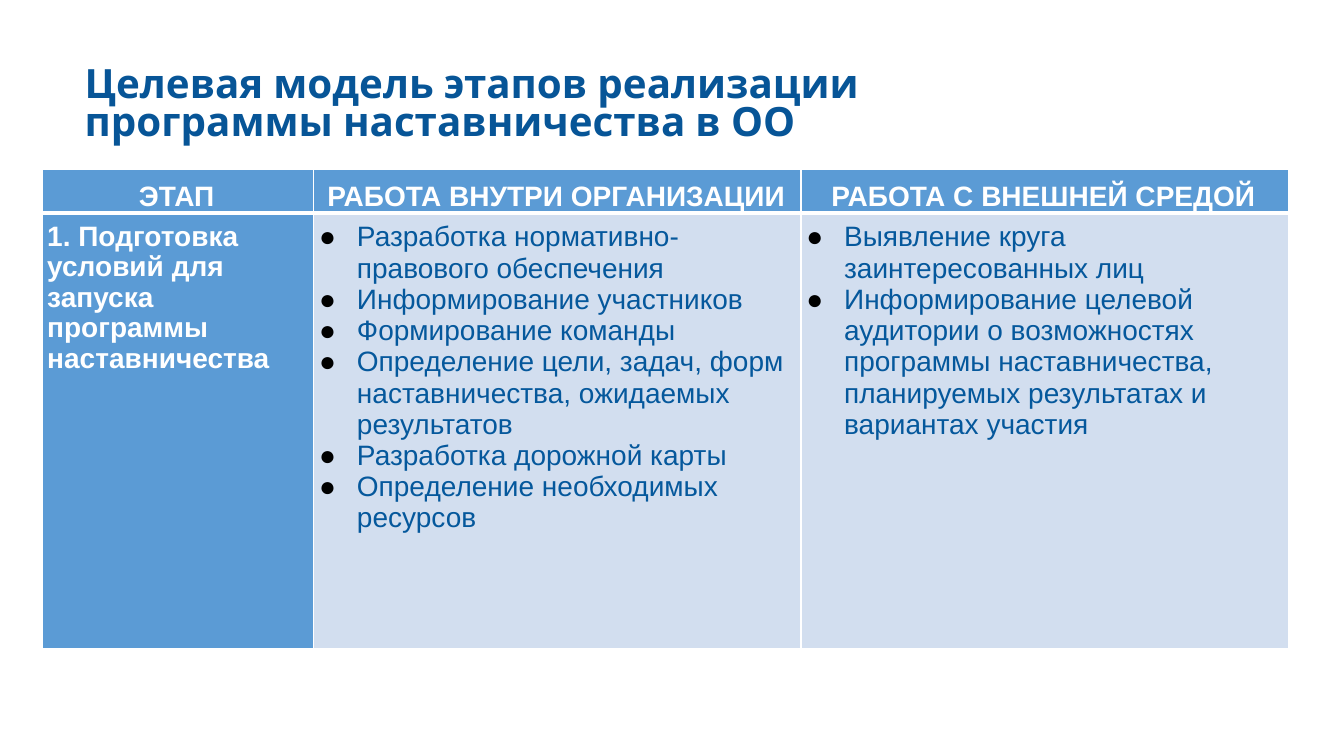
from lxml.etree import SubElement
from pptx import Presentation
from pptx.dml.color import RGBColor
from pptx.enum.text import MSO_ANCHOR as Anchor, MSO_AUTO_SIZE as AutoSize, PP_ALIGN as Align
from pptx.oxml import parse_xml
from pptx.oxml.ns import nsdecls, qn
from pptx.util import Emu, Pt

PX = 9525
WHITE = RGBColor(0xFF, 0xFF, 0xFF)
BLACK = RGBColor(0x00, 0x00, 0x00)
TITLE_BLUE = RGBColor(0x07, 0x55, 0x97)
TEXT_BLUE = RGBColor(0x05, 0x58, 0x9C)
HEADER_BLUE = RGBColor(0x5B, 0x9B, 0xD5)
PALE_BLUE = RGBColor(0xD2, 0xDE, 0xEF)

TITLE = "Целевая модель этапов реализации программы наставничества в ОО"
HEADERS = ["ЭТАП ", "РАБОТА ВНУТРИ ОРГАНИЗАЦИИ ", "РАБОТА С ВНЕШНЕЙ СРЕДОЙ "]
STAGE = "1. Подготовка условий для запуска программы наставничества"
INTERNAL_WORK = [
    "Разработка нормативно-правового обеспечения",
    "Информирование участников",
    "Формирование команды",
    "Определение цели, задач, форм наставничества, ожидаемых результатов",
    "Разработка дорожной карты",
    "Определение необходимых ресурсов",
]
EXTERNAL_WORK = [
    "Выявление круга заинтересованных лиц",
    "Информирование целевой аудитории о возможностях программы наставничества, "
    "планируемых результатах и вариантах участия",
]
COLUMN_WIDTHS = [259, 464, 464]
ROW_HEIGHTS = [42, 415]


def px(value):
    return Emu(value * PX)


def set_font(paragraph, name, size, color, bold):
    font = paragraph.font
    font.name = name
    font.size = Pt(size)
    font.bold = bold
    font.color.rgb = color


def add_bullet(paragraph):
    properties = paragraph._p.get_or_add_pPr()
    properties.set("marL", str(px(36)))
    properties.set("indent", str(px(-36)))
    bullet_color = SubElement(properties, qn("a:buClr"))
    SubElement(bullet_color, qn("a:srgbClr"), val=str(BLACK))
    SubElement(properties, qn("a:buFont"), typeface="Arial")
    SubElement(properties, qn("a:buChar"), char="●")


def set_borders(cell, bottom_width):
    properties = cell._tc.get_or_add_tcPr()
    sides = [("L", 1), ("R", 1), ("T", 1), ("B", bottom_width)]
    for index, (side, width) in enumerate(sides):
        border = parse_xml(
            f'<a:ln{side} {nsdecls("a")} w="{Pt(width)}"><a:solidFill>'
            f'<a:srgbClr val="{WHITE}"/></a:solidFill></a:ln{side}>'
        )
        properties.insert(index, border)


def fill_cell(cell, lines, fill, color, bold, spacing=None, align=Align.LEFT,
              anchor=Anchor.TOP, bulleted=False, bottom_width=1):
    cell.margin_left, cell.margin_top = px(5), px(8)
    cell.margin_right = cell.margin_bottom = 0
    cell.vertical_anchor = anchor
    cell.fill.solid()
    cell.fill.fore_color.rgb = fill
    set_borders(cell, bottom_width)
    cell.text_frame.text = "\n".join(lines)
    for paragraph in cell.text_frame.paragraphs:
        if bulleted:
            add_bullet(paragraph)
        paragraph.alignment = align
        paragraph.line_spacing = spacing
        set_font(paragraph, "Arial", 20, color, bold)


def add_title(slide):
    title = slide.shapes.title
    title.left, title.top, title.width, title.height = px(71), px(56), px(799), px(90)
    frame = title.text_frame
    frame.text = TITLE
    frame.word_wrap = True
    frame.auto_size = AutoSize.NONE
    frame.vertical_anchor = Anchor.MIDDLE
    paragraph = frame.paragraphs[0]
    paragraph.alignment = Align.LEFT
    paragraph.line_spacing = 0.8
    set_font(paragraph, "Karla", 28.8, TITLE_BLUE, True)


def add_stage_table(slide):
    table = slide.shapes.add_table(
        len(ROW_HEIGHTS), len(COLUMN_WIDTHS), px(40), px(161),
        px(sum(COLUMN_WIDTHS)), px(sum(ROW_HEIGHTS)),
    ).table
    table.horz_banding = False
    for column, width in zip(table.columns, COLUMN_WIDTHS):
        column.width = px(width)
    for row, height in zip(table.rows, ROW_HEIGHTS):
        row.height = px(height)
    for index, header in enumerate(HEADERS):
        fill_cell(table.cell(0, index), [header], HEADER_BLUE, WHITE, True, spacing=1.07,
                  align=Align.CENTER, anchor=Anchor.MIDDLE, bottom_width=3)
    fill_cell(table.cell(1, 0), [STAGE], HEADER_BLUE, WHITE, True, spacing=0.98)
    for index, items in enumerate([INTERNAL_WORK, EXTERNAL_WORK], start=1):
        fill_cell(table.cell(1, index), items, PALE_BLUE, TEXT_BLUE, False, bulleted=True)
    for index in range(len(COLUMN_WIDTHS)):
        table.cell(1, index)._tc.tcPr.find(qn("a:lnT")).set("w", str(Pt(3)))


def main():
    presentation = Presentation()
    presentation.slide_width, presentation.slide_height = px(1280), px(720)
    slide = presentation.slides.add_slide(presentation.slide_layouts[5])
    add_title(slide)
    add_stage_table(slide)
    presentation.save("out.pptx")


if __name__ == "__main__":
    main()
